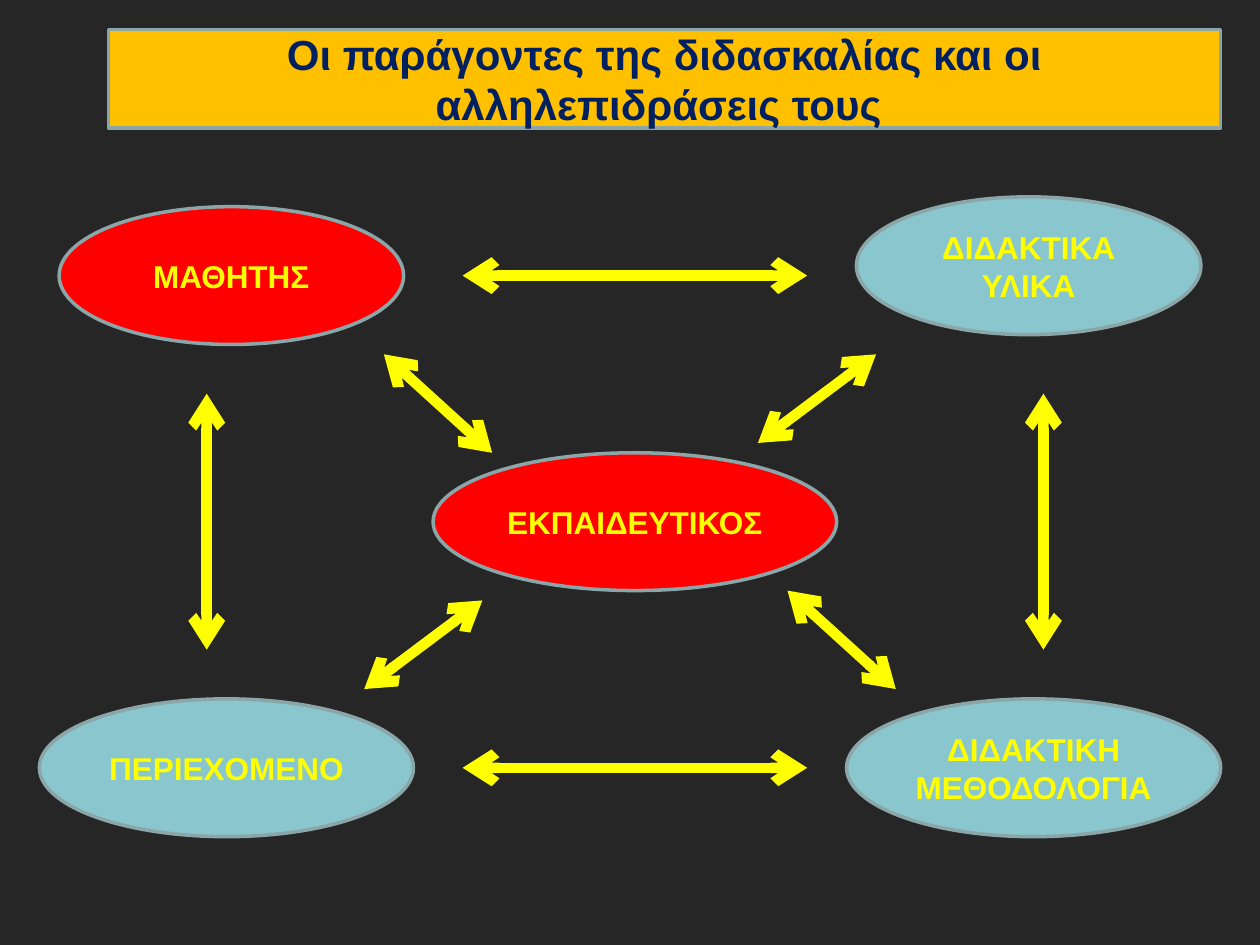
from lxml import etree
from pptx import Presentation
from pptx import util as u
from pptx.dml.color import RGBColor
from pptx.enum import shapes, text
from pptx.oxml import ns

deck = Presentation()
deck.slide_width, deck.slide_height = u.Inches(10), u.Inches(7.5)
cell = deck.slide_width / 128
page = deck.slides.add_slide(deck.slide_layouts[5])


def paint(target, color):
    target.solid()
    target.fore_color.rgb = RGBColor.from_string(color)


def dress(box, words, size, fill, ink):
    paint(box.fill, fill)
    paint(box.line.fill, "8AA6A8")
    box.line.width = u.Pt(2)
    frame = box.text_frame
    frame.word_wrap = True
    frame.auto_size = text.MSO_AUTO_SIZE.NONE
    frame.vertical_anchor = text.MSO_ANCHOR.MIDDLE
    para = frame.paragraphs[0]
    para.alignment = text.PP_ALIGN.CENTER
    span = para.add_run()
    span.text = words
    span.font.name = "Arial"
    span.font.size = u.Pt(size)
    span.font.bold = True
    paint(span.font.fill, ink)


paint(page.background.fill, "262626")

title = page.shapes.title
title.left, title.top, title.width, title.height = [round(n * cell) for n in (11, 3, 113, 10)]
outline = etree.SubElement(title._element.spPr, ns.qn("a:prstGeom"), prst="roundRect")
etree.SubElement(outline, ns.qn("a:avLst"))
dress(title, "Οι παράγοντες της διδασκαλίας και οι αλληλεπιδράσεις τους ", 24, "FFC000", "002060")

factors = [
    ("ΕΚΠΑΙΔΕΥΤΙΚΟΣ", 44, 46, 41, "FF0000"),
    ("ΜΑΘΗΤΗΣ", 6, 21, 35, "FF0000"),
    ("ΔΙΔΑΚΤΙΚΑ ΥΛΙΚΑ", 87, 20, 35, "8AC6CD"),
    ("ΠΕΡΙΕΧΟΜΕΝΟ", 4, 71, 38, "8AC6CD"),
    ("ΔΙΔΑΚΤΙΚΗ ΜΕΘΟΔΟΛΟΓΙΑ", 86, 71, 38, "8AC6CD"),
]
for words, column, row, columns, fill in factors:
    place = [round(n * cell) for n in (column, row, columns, 14)]
    oval = page.shapes.add_shape(shapes.MSO_SHAPE.OVAL, *place)
    oval.shadow.inherit = False
    dress(oval, words, 18, fill, "FFFF00")

interactions = [
    (39, 36, 50, 46), (89, 36, 77, 45), (80, 60, 91, 70), (49, 61, 37, 70),
    (21, 40, 21, 66), (106, 40, 106, 66), (47, 28, 82, 28), (47, 78, 82, 78),
]
for ends in interactions:
    arrow = page.shapes.add_connector(
        shapes.MSO_CONNECTOR.STRAIGHT, *[round(n * cell) for n in ends])
    paint(arrow.line.fill, "FFFF00")
    arrow.line.width = u.Pt(6)
    for tip in ("a:headEnd", "a:tailEnd"):
        etree.SubElement(arrow.line._get_or_add_ln(), ns.qn(tip), type="arrow")
    etree.SubElement(arrow._element.spPr, ns.qn("a:effectLst"))

deck.save("out.pptx")
